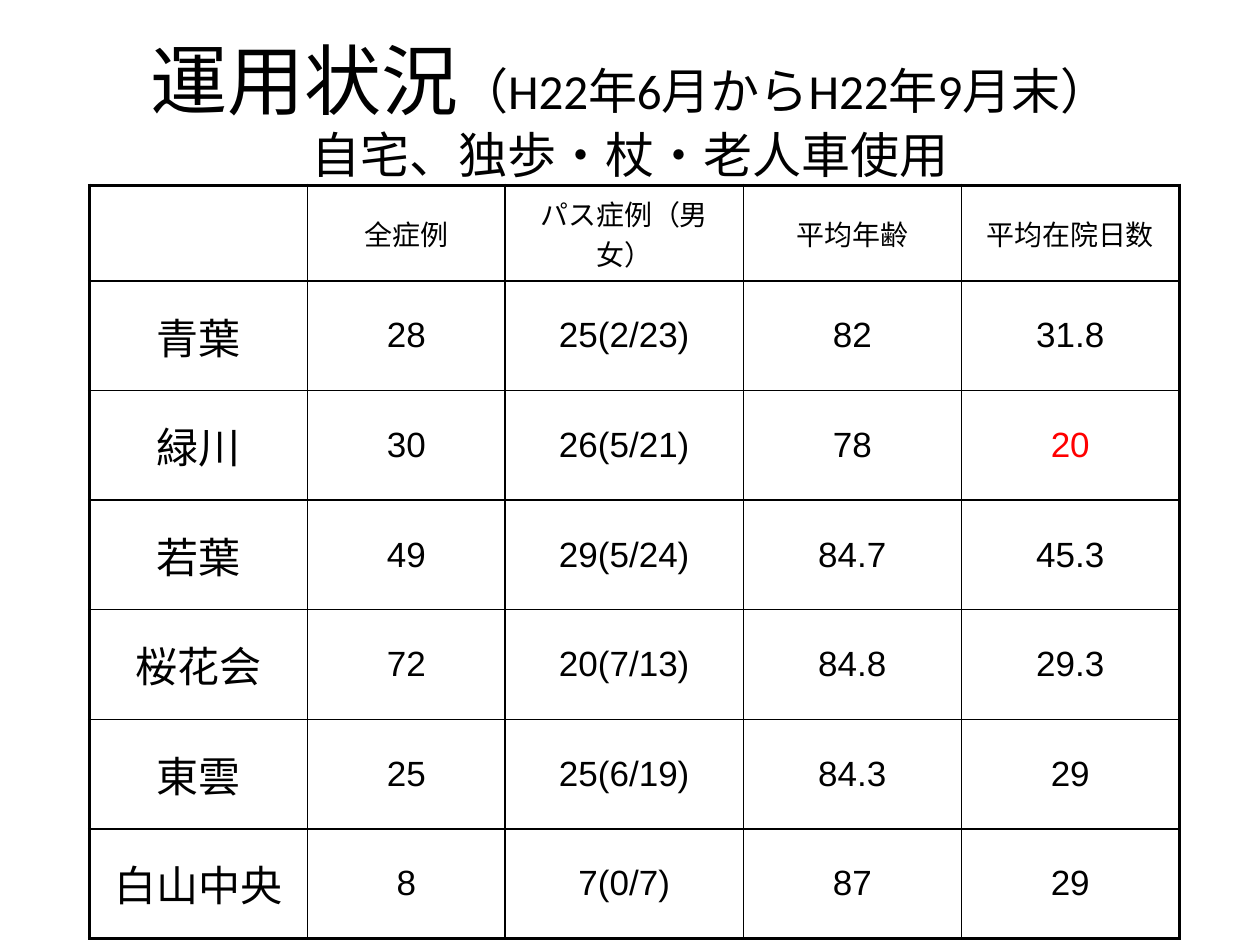
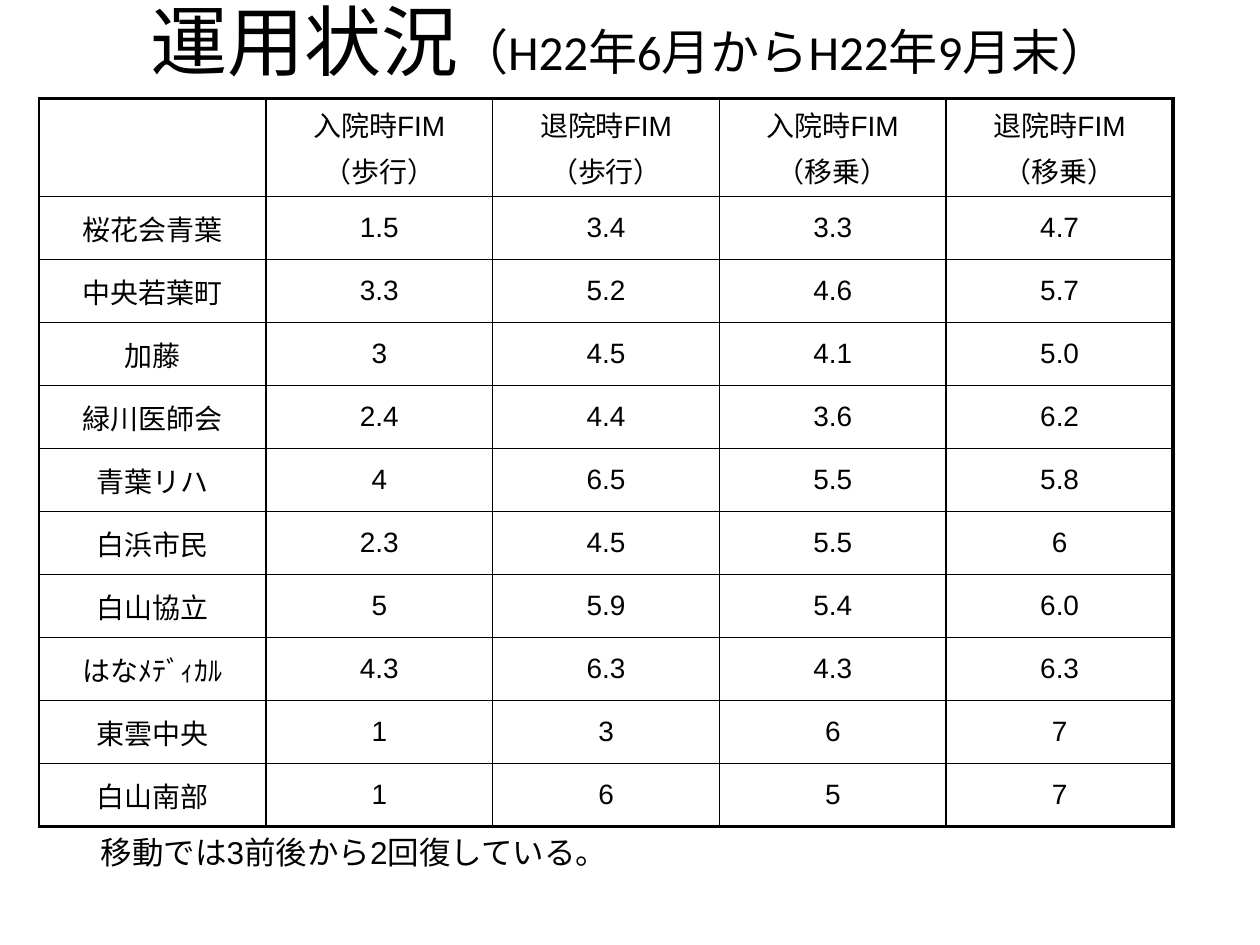
from lxml import etree
from pptx import Presentation
from pptx.dml.color import RGBColor
from pptx.enum.text import MSO_ANCHOR, PP_ALIGN
from pptx.oxml.ns import qn
from pptx.util import Inches, Pt

MIDDLE, CENTER = MSO_ANCHOR.MIDDLE, PP_ALIGN.CENTER

COLORS = {"ink": "000000", "alert": "FF0000"}
TITLE_FONT, BODY_FONT = "Calibri", "Arial"
THIN, THICK = 1, 2.25
BLANK_LAYOUT = 6

TITLE = "運用状況"
PERIOD = "（H22年6月からH22年9月末）"
PATIENTS = "自宅、独歩・杖・老人車使用"
NOTE = "移動では3前後から2回復している。"

ACUTE = {
    "at": (0.71, 1.47),
    "cols": [1.73, 1.57, 1.89, 1.73, 1.73],
    "heights": (0.76, 0.87),
    "sizes": {"header": 16, "name": 24, "value": 20},
    "left_edge": THICK,
    "alerts": {(2, 4)},
    "rows": [
        ("", "全症例", "パス症例（男女）", "平均年齢", "平均在院日数"),
        ("青葉", "28", "25(2/23)", "82", "31.8"),
        ("緑川", "30", "26(5/21)", "78", "20"),
        ("若葉", "49", "29(5/24)", "84.7", "45.3"),
        ("桜花会", "72", "20(7/13)", "84.8", "29.3"),
        ("東雲", "25", "25(6/19)", "84.3", "29"),
        ("白山中央", "8", "7(0/7)", "87", "29"),
    ],
}

REHAB = {
    "at": (0.31, 0.78),
    "cols": [1.8] * 5,
    "heights": (0.78, 0.5),
    "sizes": {"header": 16, "name": 16, "value": 16},
    "left_edge": THIN,
    "alerts": set(),
    "rows": [
        ("", "入院時FIM\n（歩行）", "退院時FIM\n（歩行）",
         "入院時FIM\n（移乗）", "退院時FIM\n（移乗）"),
        ("桜花会青葉", "1.5", "3.4", "3.3", "4.7"),
        ("中央若葉町", "3.3", "5.2", "4.6", "5.7"),
        ("加藤", "3", "4.5", "4.1", "5.0"),
        ("緑川医師会", "2.4", "4.4", "3.6", "6.2"),
        ("青葉リハ", "4", "6.5", "5.5", "5.8"),
        ("白浜市民", "2.3", "4.5", "5.5", "6"),
        ("白山協立", "5", "5.9", "5.4", "6.0"),
        ("はなﾒﾃﾞｨｶﾙ", "4.3", "6.3", "4.3", "6.3"),
        ("東雲中央", "1", "3", "6", "7"),
        ("白山南部", "1", "6", "5", "7"),
    ],
}


def style_run(r, size, font=BODY_FONT, color="ink"):
    r.font.size = Pt(size)
    r.font.name = font
    r.font.color.rgb = RGBColor.from_string(COLORS[color])


def add_text_box(s, left, top, width, height):
    tf = s.shapes.add_textbox(*map(Inches, (left, top, width, height))).text_frame
    tf.word_wrap = True
    return tf


def add_title(s, top, *small_lines):
    """Large heading, then smaller lines in the same paragraph."""
    tf = add_text_box(s, 0.5, top, 9, 1.25)
    tf.vertical_anchor = MIDDLE
    p = tf.paragraphs[0]
    p.alignment = CENTER
    r = p.add_run()
    r.text = TITLE
    style_run(r, 44, TITLE_FONT)
    for i, line in enumerate(small_lines):
        if i:
            p.add_line_break()
        r = p.add_run()
        r.text = line
        style_run(r, 28, TITLE_FONT)


def set_borders(cell, widths):
    """Draw the sides of a cell; widths are points for L, R, T and B."""
    tc_pr = cell._tc.get_or_add_tcPr()
    for side, width in widths.items():
        ln = etree.SubElement(tc_pr, qn(f"a:ln{side}"), w=str(Pt(width)))
        fill = etree.SubElement(ln, qn("a:solidFill"))
        etree.SubElement(fill, qn("a:srgbClr"), val=COLORS["ink"])


def fill_cell(cell, text, size, color):
    cell.vertical_anchor = MIDDLE
    cell.text_frame.text = text
    for p in cell.text_frame.paragraphs:
        p.alignment = CENTER
        p.space_before = Pt(size * 0.2)
        for r in p.runs:
            style_run(r, size, color=color)


def add_grid(s, data):
    rows, cols = data["rows"], data["cols"]
    header_height, row_height = data["heights"]
    heights = [header_height] + [row_height] * (len(rows) - 1)
    last_row, last_col = len(rows) - 1, len(cols) - 1
    box = (*data["at"], sum(cols), sum(heights))
    table = s.shapes.add_table(len(rows), len(cols), *map(Inches, box)).table
    table.first_row = table.horz_banding = False
    for column, width in zip(table.columns, cols):
        column.width = Inches(width)
    for i, (row, height) in enumerate(zip(rows, heights)):
        table.rows[i].height = Inches(height)
        for j, text in enumerate(row):
            cell = table.cell(i, j)
            role = "header" if i == 0 else "name" if j == 0 else "value"
            color = "alert" if (i, j) in data["alerts"] else "ink"
            fill_cell(cell, text, data["sizes"][role], color)
            set_borders(cell, {
                "L": data["left_edge"] if j == 0 else THIN,
                "R": THICK if j == last_col else THIN,
                "T": THICK if i == 0 else THIN,
                "B": THICK if i == last_row else THIN,
            })
            cell.fill.background()


def add_note(s):
    tf = add_text_box(s, 0.7, 6.56, 3.98, 0.71)
    tf.text = NOTE
    style_run(tf.paragraphs[0].runs[0], 18)


def main():
    prs = Presentation()
    prs.slide_width, prs.slide_height = Inches(10), Inches(7.5)
    blank = prs.slide_layouts[BLANK_LAYOUT]

    s = prs.slides.add_slide(blank)
    add_title(s, 0.23, PERIOD, PATIENTS)
    add_grid(s, ACUTE)

    s = prs.slides.add_slide(blank)
    add_title(s, -0.31, PERIOD)
    add_grid(s, REHAB)
    add_note(s)

    prs.save("out.pptx")


if __name__ == "__main__":
    main()
